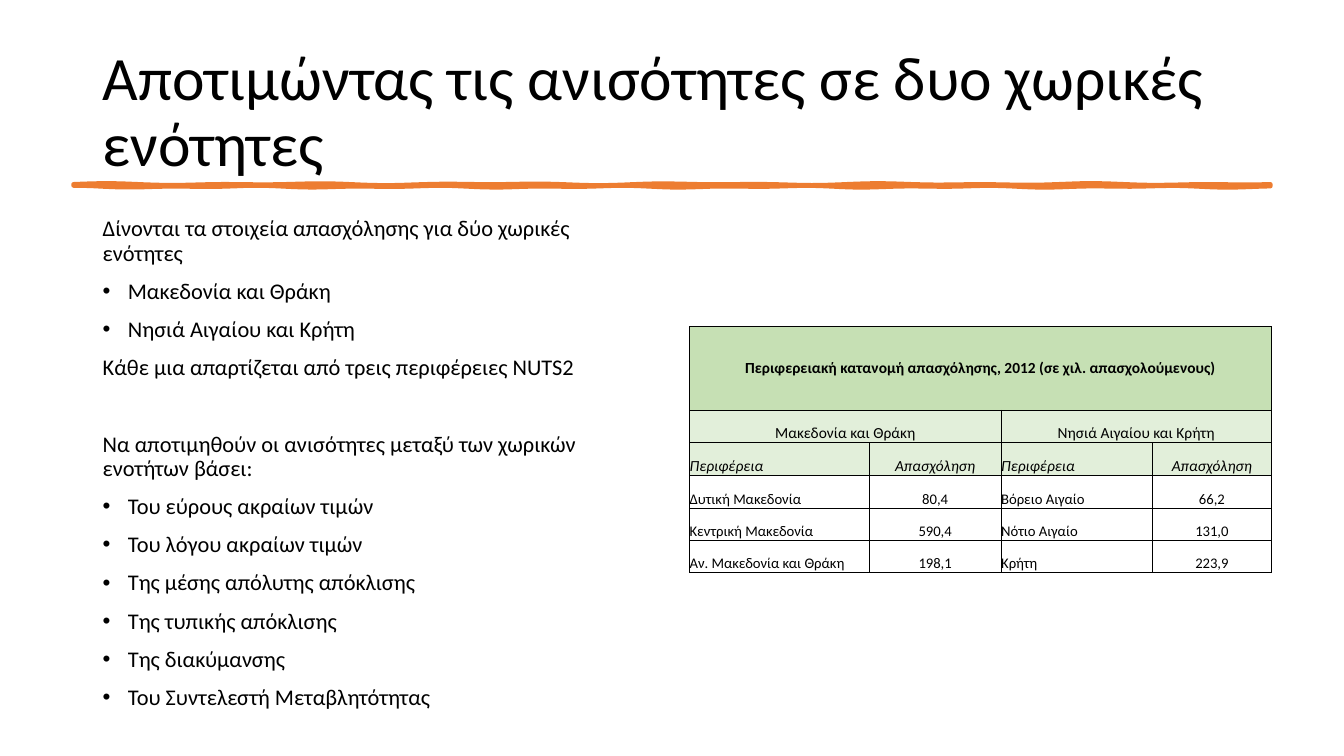
import math

import pptx
import pptx.dml.color
import pptx.enum.text
import pptx.oxml
import pptx.oxml.ns
import pptx.util

Inches, Pt = pptx.util.Inches, pptx.util.Pt
ANCHOR, ALIGN = pptx.enum.text.MSO_ANCHOR, pptx.enum.text.PP_ALIGN
BLACK, ORANGE, GREEN, PALE_GREEN = "000000", "ED7D31", "C6E0B4", "E2EFDA"


def color(hex_string):
    return pptx.dml.color.RGBColor.from_string(hex_string)


def write(paragraph, text, size, paragraph_format=None, **font_format):
    """Put one formatted run into the paragraph."""
    run = paragraph.add_run()
    run.text = text
    run.font.color.rgb = color(BLACK)
    for name, value in {"name": "Calibri", "size": Pt(size), **font_format}.items():
        setattr(run.font, name, value)
    for name, value in (paragraph_format or {}).items():
        setattr(paragraph, name, value)


presentation = pptx.Presentation()
presentation.slide_width, presentation.slide_height = Inches(13.33), Inches(7.5)
slide = presentation.slides.add_slide(presentation.slide_layouts[6])

# Title
title = slide.shapes.add_textbox(Inches(0.92), Inches(0.4), Inches(11.5), Inches(1.45))
title.text_frame.word_wrap = True
title.text_frame.vertical_anchor = ANCHOR.MIDDLE
write(title.text_frame.paragraphs[0], "Αποτιμώντας τις ανισότητες σε δυο χωρικές ενότητες", 44,
      {"line_spacing": 0.9})

# Hand-drawn rule: two wavy edges
left, width, steps = 0.73, 11.87, 120
upper, lower = [], []
for step in range(steps + 1):
    x = left + width * step / steps
    upper.append((Inches(x), Inches(1.83 + 0.01 * math.sin(4.5 * x) * math.sin(1.3 * x))))
    lower.append((Inches(x), Inches(1.85 + 0.01 * math.sin(5.2 * x + 1) * math.sin(1.7 * x))))
outline = upper + lower[::-1]
builder = slide.shapes.build_freeform(*outline[0])
builder.add_line_segments(outline[1:], close=True)
rule = builder.convert_to_shape()
rule.shadow.inherit = False
rule.fill.solid()
rule.fill.fore_color.rgb = color(ORANGE)
rule.line.color.rgb = color(ORANGE)
rule.line.width = Pt(3.25)

# Body: text, bulleted, space before
body_lines = [
    ("Δίνονται τα στοιχεία απασχόλησης για δύο χωρικές ενότητες", False, 10),
    ("Μακεδονία και Θράκη", True, 10),
    ("Νησιά Αιγαίου και Κρήτη", True, 10),
    ("Κάθε μια απαρτίζεται από τρεις περιφέρειες NUTS2", False, 10),
    ("Να αποτιμηθούν οι ανισότητες μεταξύ των χωρικών ενοτήτων βάσει:", False, 37.5),
    ("Του εύρους ακραίων τιμών", True, 10),
    ("Του λόγου ακραίων τιμών", True, 10),
    ("Της μέσης απόλυτης απόκλισης", True, 10),
    ("Της τυπικής απόκλισης", True, 10),
    ("Της διακύμανσης", True, 10),
    ("Του Συντελεστή Μεταβλητότητας", True, 10),
]
body = slide.shapes.add_textbox(Inches(0.92), Inches(2.11), Inches(5.32), Inches(5.06))
body.text_frame.word_wrap = True
for index, (text, bulleted, space) in enumerate(body_lines):
    paragraph = body.text_frame.paragraphs[0] if index == 0 else body.text_frame.add_paragraph()
    write(paragraph, text, 16, {"line_spacing": 0.9, "space_before": Pt(space)})
    if bulleted:
        properties = paragraph._p.get_or_add_pPr()
        properties.set("marL", str(Inches(0.25)))
        properties.set("indent", str(-Inches(0.25)))
        namespace = pptx.oxml.ns.nsdecls("a")
        properties.append(pptx.oxml.parse_xml(f'<a:buFont {namespace} typeface="Arial"/>'))
        properties.append(pptx.oxml.parse_xml(f'<a:buChar {namespace} char="•"/>'))

# Employment table
column_widths = [1.78, 1.31, 1.5, 1.18]
row_heights = [0.83, 0.32, 0.33, 0.32, 0.32, 0.32]
rows = [
    ["Περιφερειακή κατανομή απασχόλησης, 2012 (σε χιλ. απασχολούμενους)", "", "", ""],
    ["Μακεδονία και Θράκη", "", "Νησιά Αιγαίου και Κρήτη", ""],
    ["Περιφέρεια", "Απασχόληση"] * 2,
    ["Δυτική Μακεδονία", "80,4", "Βόρειο Αιγαίο", "66,2"],
    ["Κεντρική Μακεδονία", "590,4", "Νότιο Αιγαίο", "131,0"],
    ["Αν. Μακεδονία και Θράκη", "198,1", "Κρήτη", "223,9"],
]
row_fills = [GREEN, PALE_GREEN, PALE_GREEN, None, None, None]
table = slide.shapes.add_table(len(rows), len(column_widths), Inches(6.84), Inches(3.24),
                               Inches(5.76), Inches(2.42)).table
table.first_row = table.horz_banding = False
for column, column_width in zip(table.columns, column_widths):
    column.width = Inches(column_width)
for row, height in zip(table.rows, row_heights):
    row.height = Inches(height)
table.cell(0, 0).merge(table.cell(0, 3))
table.cell(1, 0).merge(table.cell(1, 1))
table.cell(1, 2).merge(table.cell(1, 3))

for row_index, texts in enumerate(rows):
    for column_index, text in enumerate(texts):
        cell = table.cell(row_index, column_index)
        cell_format = {
            "margin_left": 0, "margin_right": 0, "margin_top": 0, "margin_bottom": 0,
            "vertical_anchor": ANCHOR.MIDDLE if row_index == 0 else ANCHOR.BOTTOM,
        }
        for name, value in cell_format.items():
            setattr(cell, name, value)
        for side in "LRTB":
            cell._tc.get_or_add_tcPr().append(pptx.oxml.parse_xml(
                f'<a:ln{side} {pptx.oxml.ns.nsdecls("a")} w="{Pt(0.5)}">'
                f'<a:solidFill><a:srgbClr val="{BLACK}"/></a:solidFill></a:ln{side}>'))
        if row_fills[row_index]:
            cell.fill.solid()
            cell.fill.fore_color.rgb = color(row_fills[row_index])
        else:
            cell.fill.background()
        if text:
            centered = row_index < 2 or column_index % 2 == 1
            write(cell.text_frame.paragraphs[0], text, 11 if row_index < 3 else 10.5,
                  {"alignment": ALIGN.CENTER if centered else ALIGN.LEFT},
                  bold=row_index == 0, italic=row_index == 2)

presentation.save("out.pptx")
